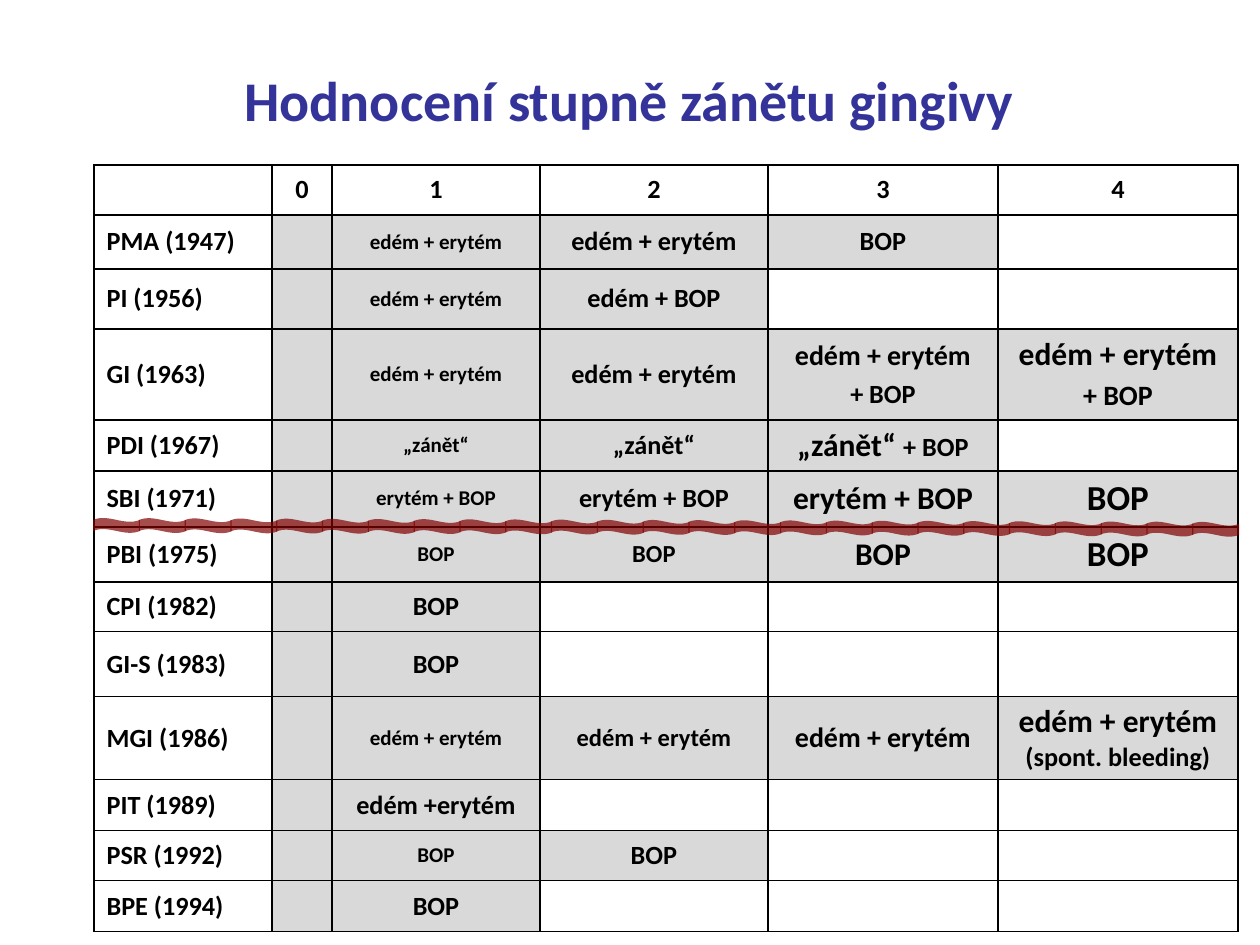
import pptx
import pptx.dml.color
import pptx.enum.shapes
import pptx.enum.text
import pptx.oxml
import pptx.oxml.ns
import pptx.util

RGB = pptx.dml.color.RGBColor
ALIGN = pptx.enum.text.PP_ALIGN
MIDDLE = pptx.enum.text.MSO_ANCHOR.MIDDLE

NAVY = RGB(0x33, 0x33, 0x99)
BLACK = RGB(0, 0, 0)
WHITE = RGB(255, 255, 255)
GREY = RGB(0xD9, 0xD9, 0xD9)
MAROON = RGB(0x80, 0, 0)
FONT = "Calibri"

COLUMNS = [178, 60, 208, 228, 230, 240]
HEADER_HEIGHT = 50
BOTH = "edém + erytém"
WAVES = 25

# Index name, row height, then the cells of grades 1 to 4.
# A cell lists (text, size) runs; a leading line break opens a new paragraph.
INDICES = [
    ("PMA (1947)", 54, [[(BOTH, 12)], [(BOTH, 15)], [("BOP", 15)]]),
    ("PI (1956)", 60, [[(BOTH, 12)], [("edém + BOP", 15)]]),
    ("GI (1963)", 91, [[(BOTH, 12)], [(BOTH, 15)],
                       [(BOTH, 16), ("\n+ BOP", 15)],
                       [(BOTH, 18), ("\n+ BOP", 16)]]),
    ("PDI (1967)", 51, [[("„zánět“", 12)], [("„zánět“", 15)],
                        [("„zánět“ ", 18), ("+ BOP", 15)]]),
    ("SBI (1971)", 56, [[("erytém + BOP", 12)], [("erytém + BOP", 15)],
                        [("erytém + BOP", 18)], [("BOP", 20)]]),
    ("PBI (1975)", 55, [[("BOP", 12)], [("BOP", 14)],
                        [("BOP", 18)], [("BOP", 20)]]),
    ("CPI (1982)", 50, [[("BOP", 15)]]),
    ("GI-S (1983)", 65, [[("BOP", 15)]]),
    ("MGI (1986)", 83, [[(BOTH, 12)], [(BOTH, 14)], [(BOTH, 16)],
                        [(BOTH + " ", 18), ("(spont. bleeding)", 15)]]),
    ("PIT (1989)", 51, [[("edém +erytém", 15)]]),
    ("PSR (1992)", 50, [[("BOP", 12)], [("BOP", 15)]]),
    ("BPE (1994)", 51, [[("BOP", 15)]]),
]


def px(n):
    return pptx.util.Emu(round(n * 914400 / 126))


def add_text(p, text, size=15, color=BLACK, align=ALIGN.CENTER):
    p.alignment = align
    r = p.add_run()
    r.text = text
    r.font.name = FONT
    r.font.size = pptx.util.Pt(size)
    r.font.bold = True
    r.font.color.rgb = color


def add_borders(cell):
    tc_pr = cell._tc.get_or_add_tcPr()
    for side in "LRTB":
        tc_pr.append(pptx.oxml.parse_xml(
            f'<a:ln{side} {pptx.oxml.ns.nsdecls("a")} w="12700"><a:solidFill>'
            f'<a:srgbClr val="{BLACK}"/></a:solidFill></a:ln{side}>'))


def fill_cell(cell, runs, fill, align=ALIGN.CENTER):
    add_borders(cell)
    cell.fill.solid()
    cell.fill.fore_color.rgb = fill
    cell.vertical_anchor = MIDDLE
    cell.margin_top = cell.margin_bottom = px(3)
    p = cell.text_frame.paragraphs[0]
    for text, size in runs:
        if text.startswith("\n"):
            p = cell.text_frame.add_paragraph()
            p.space_before = pptx.util.Pt(3)
        add_text(p, text.lstrip("\n"), size=size, align=align)


def add_title(s, text):
    title = s.shapes.title
    title.left, title.top, title.width, title.height = px(94), px(20), px(1071), px(158)
    title.text_frame.vertical_anchor = MIDDLE
    add_text(title.text_frame.paragraphs[0], text, size=32, color=NAVY)


def add_index_table(s):
    heights = [HEADER_HEIGHT] + [height for _, height, _ in INDICES]
    table = s.shapes.add_table(len(heights), len(COLUMNS), px(94), px(165),
                               px(sum(COLUMNS)), px(sum(heights))).table
    table.first_row = table.horz_banding = False
    for column, width in zip(table.columns, COLUMNS):
        column.width = px(width)
    for row, height in zip(table.rows, heights):
        row.height = px(height)

    fill_cell(table.cell(0, 0), [], WHITE)
    for grade in range(5):
        fill_cell(table.cell(0, grade + 1), [(str(grade), 15)], WHITE)
    for i, (name, _, grades) in enumerate(INDICES, 1):
        fill_cell(table.cell(i, 0), [(name, 15)], WHITE, ALIGN.LEFT)
        fill_cell(table.cell(i, 1), [], GREY)
        for j in range(4):
            runs = grades[j] if j < len(grades) else []
            fill_cell(table.cell(i, j + 2), runs, GREY if runs else WHITE)


def add_wavy_line(s):
    """Chain of waves that sinks slightly from left to right."""
    group = s.shapes.add_group_shape()
    for i in range(WAVES):
        sp = group.shapes.add_shape(
            pptx.enum.shapes.MSO_SHAPE.WAVE,
            px(93 + i * 45.8), px(518 + i * 4 / WAVES), px(47), px(15))
        sp.adjustments[0] = 0.13
        sp.adjustments[1] = 0
        sp.shadow.inherit = False
        sp.line.fill.background()
        sp.fill.solid()
        sp.fill.fore_color.rgb = MAROON
        color = sp._element.spPr.find(".//" + pptx.oxml.ns.qn("a:srgbClr"))
        color.append(pptx.oxml.parse_xml(
            f'<a:alpha {pptx.oxml.ns.nsdecls("a")} val="70000"/>'))


def main():
    prs = pptx.Presentation()
    prs.slide_width, prs.slide_height = px(1260), px(945)
    s = prs.slides.add_slide(prs.slide_layouts[5])
    add_title(s, "Hodnocení stupně zánětu gingivy")
    add_index_table(s)
    add_wavy_line(s)
    prs.save("out.pptx")


if __name__ == "__main__":
    main()
